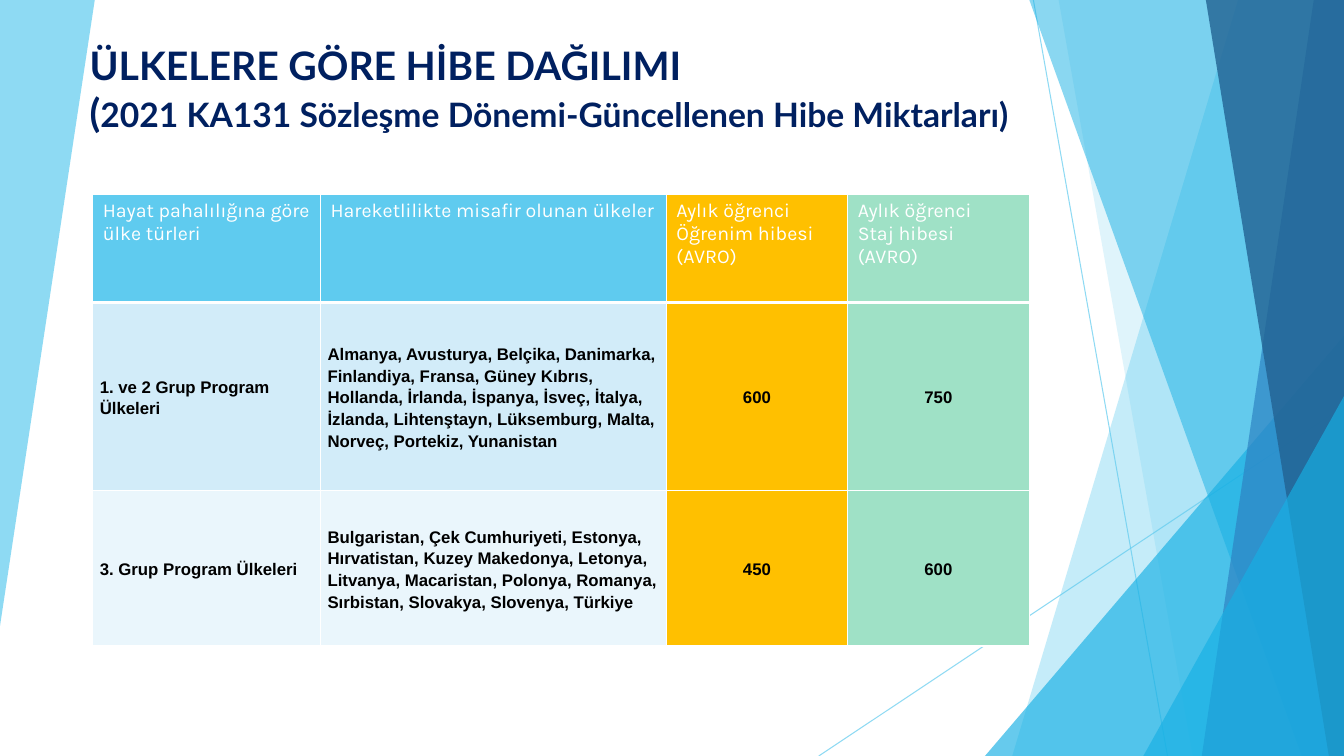
import pptx
import pptx.dml.color
import pptx.enum.shapes
import pptx.enum.text
import pptx.util
from lxml import etree
from pptx.oxml.ns import qn

RGB = pptx.dml.color.RGBColor
SHAPE = pptx.enum.shapes.MSO_SHAPE
ANCHOR = pptx.enum.text.MSO_ANCHOR
ALIGN = pptx.enum.text.PP_ALIGN
Pt = pptx.util.Pt

SKY = RGB(0x5F, 0xCB, 0xEF)
CYAN = RGB(0x17, 0xB0, 0xE4)
BLUE = RGB(0x2E, 0x83, 0xC3)
DEEP = RGB(0x22, 0x62, 0x92)
NAVY = RGB(0x00, 0x20, 0x60)
AMBER = RGB(0xFF, 0xC0, 0x00)
MINT = RGB(0x9F, 0xE1, 0xC6)
PALE = RGB(0xD2, 0xEC, 0xF9)
PALER = RGB(0xEA, 0xF6, 0xFC)
WHITE = RGB(0xFF, 0xFF, 0xFF)
BLACK = RGB(0x00, 0x00, 0x00)

SLIDE_W = pptx.util.Inches(13.33)
SLIDE_H = pptx.util.Inches(7.5)

# Table: sizes are percentages of the slide
COLUMNS = [16.95, 25.73, 13.5, 13.5]
ROWS = [14.27, 24.93, 20.53]
FILLS = [[SKY, SKY, AMBER, MINT], [PALE, PALE, AMBER, MINT], [PALER, PALER, AMBER, MINT]]
TEXTS = [
    ["Hayat pahalılığına göre ülke türleri", "Hareketlilikte misafir olunan ülkeler",
     "Aylık öğrenci Öğrenim hibesi (AVRO)", "Aylık öğrenci \vStaj hibesi (AVRO)"],
    ["1. ve 2 Grup Program Ülkeleri",
     "Almanya, Avusturya, Belçika, Danimarka, Finlandiya, Fransa, Güney Kıbrıs, "
     "Hollanda, İrlanda, İspanya, İsveç, İtalya, İzlanda, Lihtenştayn, Lüksemburg, "
     "Malta, Norveç, Portekiz, Yunanistan", "600", "750"],
    ["3. Grup Program Ülkeleri",
     "Bulgaristan, Çek Cumhuriyeti, Estonya, Hırvatistan, Kuzey Makedonya, Letonya, "
     "Litvanya, Macaristan, Polonya, Romanya, Sırbistan, Slovakya, Slovenya, Türkiye",
     "450", "600"],
]


def across(pct):
    return round(SLIDE_W * pct / 100)


def down(pct):
    return round(SLIDE_H * pct / 100)


def set_alpha(fill_parent, pct):
    color = fill_parent.find(".//" + qn("a:srgbClr"))
    etree.SubElement(color, qn("a:alpha"), val=str(pct * 1000))


def paint(sp, color, alpha):
    sp.shadow.inherit = False
    sp.fill.solid()
    sp.fill.fore_color.rgb = color
    sp.line.fill.background()
    set_alpha(sp._element.spPr, alpha)


def add_facet(s, points, color, alpha):
    corners = [(across(x), down(y)) for x, y in points]
    builder = s.shapes.build_freeform(*corners[0])
    builder.add_line_segments(corners[1:], close=True)
    paint(builder.convert_to_shape(), color, alpha)


def add_right_facet(s, top, bottom, color, alpha):
    """Band from the given top and bottom points out to the right edge."""
    add_facet(s, [(top, 0), (100, 0), (100, 100), (bottom, 100)], color, alpha)


def add_corner(s, left, top):
    """Triangle in the lower right corner."""
    sp = s.shapes.add_shape(SHAPE.ISOSCELES_TRIANGLE, across(left), down(top),
                            across(100 - left), down(100 - top))
    sp.adjustments[0] = 1
    paint(sp, CYAN, 66)


def add_hairline(s, x1, y1, x2, y2):
    line = s.shapes.add_connector(pptx.enum.shapes.MSO_CONNECTOR.STRAIGHT,
                                  across(x1), down(y1), across(x2), down(y2))
    line.line.color.rgb = SKY
    line.line.width = Pt(0.75)
    set_alpha(line._element.spPr, 70)
    etree.SubElement(line._element.spPr, qn("a:effectLst"))


def set_font(p, name, size, color, bold):
    p.font.name = name
    p.font.size = Pt(size)
    p.font.color.rgb = color
    p.font.bold = bold


def add_title(s):
    sp = s.shapes.add_textbox(across(5.93), down(8.4), across(70.74), down(10.13))
    tf = sp.text_frame
    tf.word_wrap = True
    tf.vertical_anchor = ANCHOR.BOTTOM
    p = tf.paragraphs[0]
    set_font(p, "Lato", 28, NAVY, True)
    p.text = "ÜLKELERE GÖRE HİBE DAĞILIMI \v("
    r = p.add_run()
    r.text = "2021 KA131 Sözleşme Dönemi-Güncellenen Hibe Miktarları)"
    r.font.size = Pt(24)


def add_borders(cell, bottom):
    tcPr = cell._tc.get_or_add_tcPr()
    for side, width in (("L", 1), ("R", 1), ("T", 1), ("B", bottom)):
        ln = etree.SubElement(tcPr, qn(f"a:ln{side}"), w=str(Pt(width)))
        fill = etree.SubElement(ln, qn("a:solidFill"))
        etree.SubElement(fill, qn("a:srgbClr"), val=str(WHITE))


def fill_cell(cell, text, color, header, centred):
    add_borders(cell, 3 if header else 1)
    cell.fill.solid()
    cell.fill.fore_color.rgb = color
    p = cell.text_frame.paragraphs[0]
    p.text = text
    if header:
        set_font(p, "Karla", 14, WHITE, False)
        return
    set_font(p, "Arial", 12, BLACK, True)
    p.line_spacing = 1.15
    p.alignment = ALIGN.CENTER if centred else ALIGN.LEFT
    cell.vertical_anchor = ANCHOR.MIDDLE
    cell.margin_left = cell.margin_right = pptx.util.Inches(0.07)
    cell.margin_top = cell.margin_bottom = 0


def add_grant_table(s):
    frame = s.shapes.add_table(len(ROWS), len(COLUMNS), across(6.9), down(25.73),
                               across(sum(COLUMNS)), down(sum(ROWS)))
    table = frame.table
    table.first_row = table.horz_banding = False
    for col, width in zip(table.columns, COLUMNS):
        col.width = across(width)
    for i, height in enumerate(ROWS):
        table.rows[i].height = down(height)
        for j, text in enumerate(TEXTS[i]):
            fill_cell(table.cell(i, j), text, FILLS[i][j], header=i == 0, centred=j > 1)


def add_backdrop(s):
    add_facet(s, [(0, 0), (7.05, 0), (0, 82.8)], SKY, 70)
    add_hairline(s, 76.89, 0, 86.87, 100)
    add_hairline(s, 100, 53.73, 60.92, 100)
    add_right_facet(s, 92.12, 75.32, SKY, 36)
    add_right_facet(s, 78.77, 88.75, SKY, 20)
    add_corner(s, 73.29, 44.4)
    add_right_facet(s, 76.59, 96.85, CYAN, 50)
    add_right_facet(s, 97.75, 89.42, BLUE, 70)
    add_right_facet(s, 89.72, 98.87, DEEP, 80)
    add_corner(s, 85.07, 52.4)


def main():
    prs = pptx.Presentation()
    prs.slide_width, prs.slide_height = SLIDE_W, SLIDE_H
    s = prs.slides.add_slide(prs.slide_layouts[6])
    add_backdrop(s)
    add_title(s)
    add_grant_table(s)
    prs.save("out.pptx")


if __name__ == "__main__":
    main()
